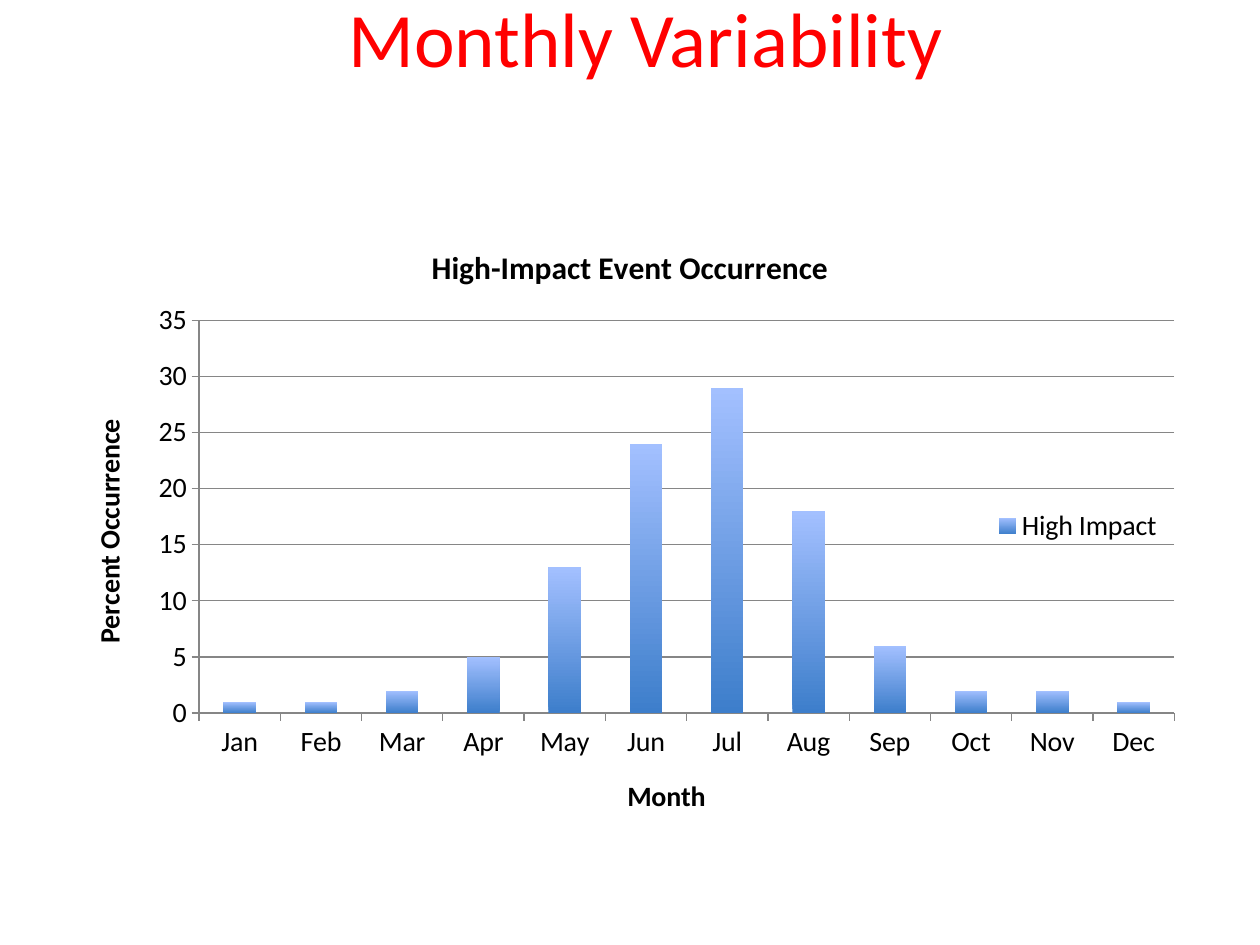
from lxml import etree
from pptx import Presentation
from pptx.chart.data import CategoryChartData
from pptx.dml.color import RGBColor
from pptx.enum import chart as ch, text
from pptx.oxml.ns import qn
from pptx.util import Pt

COLORS = {key: RGBColor.from_string(value) for key, value in {
    "title": "FF0000", "text": "000000", "line": "868686",
    "bar_bottom": "3D7ECB", "bar_top": "A3C0FF"}.items()}
FONT = "Calibri"
MONTHS = ["Jan", "Feb", "Mar", "Apr", "May", "Jun",
          "Jul", "Aug", "Sep", "Oct", "Nov", "Dec"]
PERCENT = [1, 1, 2, 5, 13, 24, 29, 18, 6, 2, 2, 1]


def style(font, size, color, bold=False):
    font.name, font.size, font.bold = FONT, Pt(size), bold
    font.color.rgb = COLORS[color]


def set_layout(parent, index, **settings):
    """Place a chart part by fractions of the chart area."""
    for old in parent.findall(qn("c:layout")):
        parent.remove(old)
    layout = etree.Element(qn("c:layout"))
    manual = etree.SubElement(layout, qn("c:manualLayout"))
    for name, value in settings.items():
        etree.SubElement(manual, qn(f"c:{name}")).set("val", str(value))
    parent.insert(index, layout)


deck = Presentation()
deck.slide_width, deck.slide_height = Pt(720), Pt(540)
page = deck.slides.add_slide(deck.slide_layouts[5])

title = page.shapes.title
title.left, title.top, title.width, title.height = Pt(84), Pt(-24), Pt(570), Pt(90)
title.text_frame.text = "Monthly Variability"
title.text_frame.vertical_anchor = text.MSO_ANCHOR.MIDDLE
para = title.text_frame.paragraphs[0]
para.alignment = text.PP_ALIGN.CENTER
style(para.runs[0].font, 44, "title")

data = CategoryChartData()
data.categories = MONTHS
data.add_series("High Impact", PERCENT)
chart = page.shapes.add_chart(ch.XL_CHART_TYPE.COLUMN_CLUSTERED,
                              Pt(36), Pt(126), Pt(648), Pt(356.4), data).chart
style(chart.font, 10, "text")

months, percents = chart.category_axis, chart.value_axis
for part, caption, size in ((chart, "High-Impact Event Occurrence", 18),
                            (months, "Month", 16),
                            (percents, "Percent Occurrence", 16)):
    frame = part.chart_title.text_frame if part is chart else part.axis_title.text_frame
    frame.text = caption
    style(frame.paragraphs[0].runs[0].font, size, "text", bold=True)
chart.chart_title.include_in_layout = False

for axis in (months, percents):
    style(axis.tick_labels.font, 16, "text")
    axis.major_tick_mark = ch.XL_TICK_MARK.OUTSIDE
    axis.format.line.color.rgb = COLORS["line"]
    axis.format.line.width = Pt(0.75)
percents.minimum_scale, percents.maximum_scale, percents.major_unit = 0, 35, 5
percents.has_major_gridlines = True
percents.major_gridlines.format.line.color.rgb = COLORS["line"]
percents.major_gridlines.format.line.width = Pt(0.75)

plot = chart.plots[0]
plot.gap_width = 150
plot.vary_by_categories = False
fill = plot.series[0].format.fill
fill.gradient()
fill.gradient_angle = 90
for stop, key in zip(fill.gradient_stops, ("bar_bottom", "bar_top")):
    stop.color.rgb = COLORS[key]

chart.has_legend = True
chart.legend.position = ch.XL_LEGEND_POSITION.RIGHT
chart.legend.include_in_layout = True
style(chart.legend.font, 16, "text")

chart_xml = chart.element.find(qn("c:chart"))
set_layout(chart_xml.find(qn("c:plotArea")), 0, layoutTarget="inner",
           xMode="edge", yMode="edge", x=0.12, y=0.16, w=0.86, h=0.63)
set_layout(chart_xml.find(qn("c:legend")), 1,
           xMode="edge", yMode="edge", x=0.82, y=0.45, w=0.15, h=0.08)

deck.save("out.pptx")
